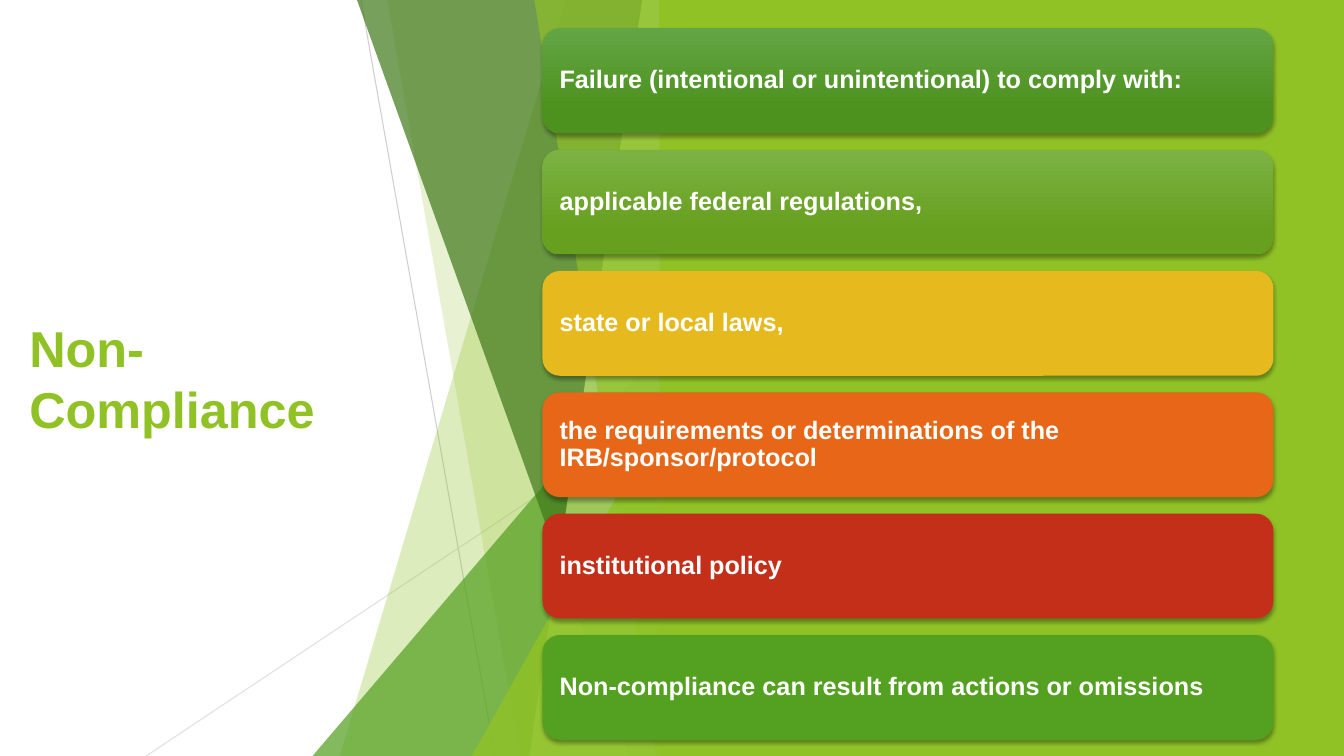
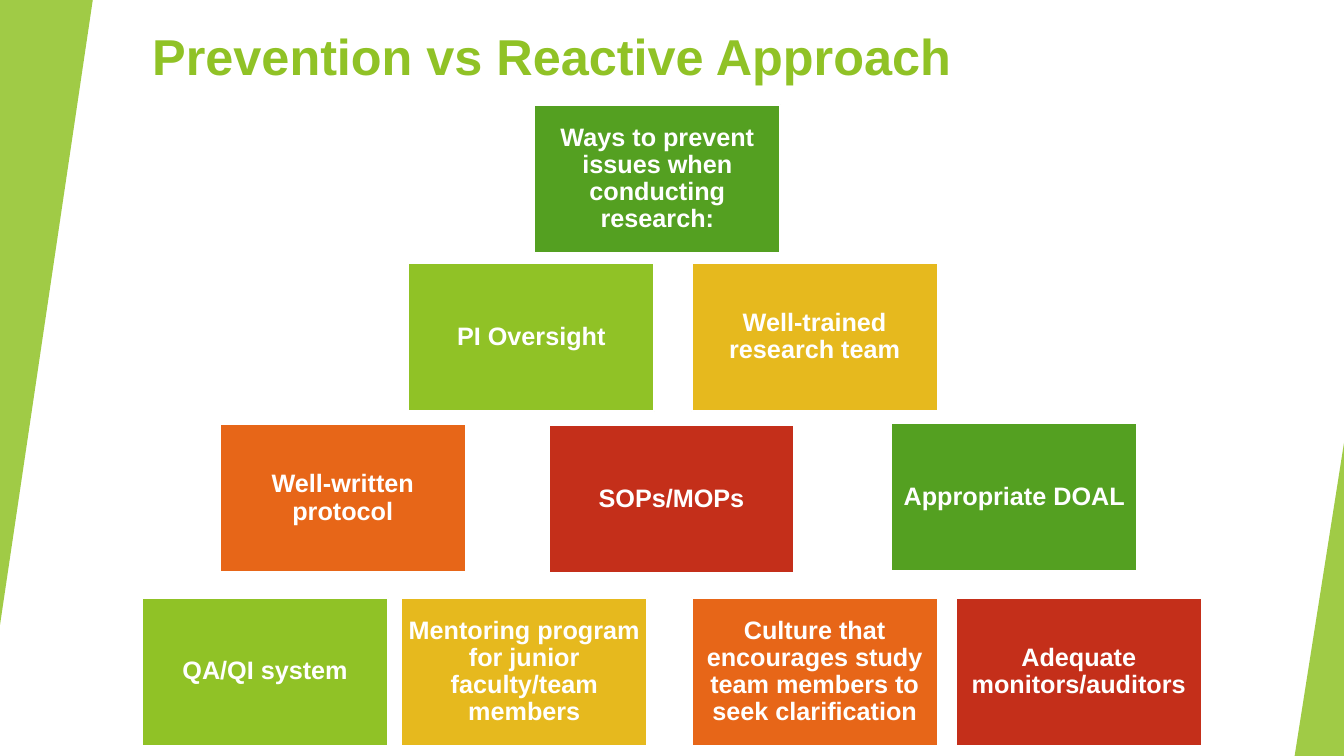
from dataclasses import dataclass
from itertools import cycle

from lxml import etree
from pptx import Presentation
from pptx.dml.color import RGBColor
from pptx.enum.shapes import MSO_CONNECTOR as Conn, MSO_SHAPE as Kind
from pptx.enum.text import MSO_ANCHOR as Anchor, MSO_AUTO_SIZE as Fit, PP_ALIGN as Align
from pptx.oxml.ns import qn
from pptx.util import Inches, Pt


@dataclass(frozen=True)
class Theme:
    font: str = "Arial"
    head: int = 36
    body: int = 18
    white: str = "FFFFFF"
    lime: str = "90C226"
    pale: str = "C0E474"
    green: str = "54A021"
    dark: str = "3F7819"
    gold: str = "E6B91E"
    orange: str = "E76618"
    red: str = "C42F1A"
    gray: str = "BFBFBF"
    light: str = "D9D9D9"
    shade: str = "000000"
    moss: tuple = ("63A545", "4D921E")
    leaf: tuple = ("7BB244", "679F1E")


T = Theme()
WIDE, HIGH = 13.33, 7.5


def add(parent, tag, **attrs):
    node = etree.SubElement(parent, qn(tag))
    for key, value in attrs.items():
        node.set(key, str(value))
    return node


def fade(shape, alpha):
    """Make the shape's one solid colour partly opaque (alpha in percent)."""
    if alpha < 100:
        color = shape._element.spPr.find(".//" + qn("a:srgbClr"))
        add(color, "a:alpha", val=alpha * 1000)


class Deck:
    def __init__(self):
        self.show = Presentation()
        self.show.slide_width = Inches(WIDE)
        self.show.slide_height = Inches(HIGH)

    def start(self, title, x, y, w, h, anchor):
        """Add a slide and place its title."""
        self.slide = self.show.slides.add_slide(self.show.slide_layouts[5])
        self.shapes = self.slide.shapes
        head = self.shapes.title
        head.left, head.top, head.width, head.height = map(Inches, (x, y, w, h))
        self.label(head, title, T.head, T.lime, Align.LEFT, anchor)

    def label(self, shape, text, size, color, align, anchor=Anchor.MIDDLE):
        frame = shape.text_frame
        frame.text = text
        frame.word_wrap = True
        frame.auto_size = Fit.NONE
        frame.vertical_anchor = anchor
        para = frame.paragraphs[0]
        para.alignment = align
        font = para.font
        font.name, font.size, font.bold = T.font, Pt(size), True
        font.color.rgb = RGBColor.from_string(color)
        return frame

    def paint(self, shape, fill, alpha=100):
        """Fill with one colour, or with a pair as a downward gradient."""
        shape.shadow.inherit = False
        shape.line.fill.background()
        if isinstance(fill, tuple):
            shape.fill.gradient()
            shape.fill.gradient_angle = 270
            for stop, spot, color in zip(shape.fill.gradient_stops, (0, 0.78), fill):
                stop.position = spot
                stop.color.rgb = RGBColor.from_string(color)
        else:
            shape.fill.solid()
            shape.fill.fore_color.rgb = RGBColor.from_string(fill)
            fade(shape, alpha)

    def block(self, kind, x, y, w, h, fill, alpha=100):
        shape = self.shapes.add_shape(kind, *map(Inches, (x, y, w, h)))
        self.paint(shape, fill, alpha)
        return shape

    def wedge(self, x, y, w, h, fill, alpha, turn=0):
        """Right triangle with its tip at the top right."""
        shape = self.block(Kind.ISOSCELES_TRIANGLE, x, y, w, h, fill, alpha)
        shape.adjustments[0] = 1
        shape.rotation = turn

    def facet(self, top, base, edge, fill, alpha):
        """Full-height panel from a slanted left side to a straight right edge."""
        points = [(edge, 0), (edge, HIGH), (base, HIGH)]
        form = self.shapes.build_freeform(Inches(top), 0)
        form.add_line_segments([(Inches(x), Inches(y)) for x, y in points])
        self.paint(form.convert_to_shape(), fill, alpha)

    def line(self, x1, y1, x2, y2, color, alpha):
        line = self.shapes.add_connector(
            Conn.STRAIGHT, *map(Inches, (x1, y1, x2, y2)))
        line.line.width = Pt(0.75)
        line.line.color.rgb = RGBColor.from_string(color)
        fade(line, alpha)
        add(line._element.spPr, "a:effectLst")

    def card(self, text, x, y, w, h, fill):
        """Rounded bar with a soft shadow and left-aligned text."""
        shape = self.block(Kind.ROUNDED_RECTANGLE, x, y, w, h, fill)
        glow = add(shape._element.spPr.find(qn("a:effectLst")), "a:outerShdw",
                   blurRad=Pt(3), dist=Pt(2), dir=90 * 60000, rotWithShape=0)
        add(add(glow, "a:srgbClr", val=T.shade), "a:alpha", val=35000)
        frame = self.label(shape, text, T.body, T.white, Align.LEFT)
        frame.margin_left = frame.margin_right = Inches(0.12)
        frame.paragraphs[0].line_spacing = 0.9

    def box(self, text, x, y, w, h, fill):
        """White-edged box with centred text."""
        shape = self.block(Kind.RECTANGLE, x, y, w, h, fill)
        shape.line.color.rgb = RGBColor.from_string(T.white)
        shape.line.width = Pt(1.5)
        frame = self.label(shape, text, T.body, T.white, Align.CENTER)
        frame.margin_left = frame.margin_right = Inches(0.07)
        frame.margin_top = frame.margin_bottom = Inches(0.07)
        frame.paragraphs[0].line_spacing = 0.9


def breach(deck):
    deck.start("Non-Compliance", 0.19, 1.51, 3.39, 4.48, Anchor.MIDDLE)
    deck.line(3.58, 0, 4.91, HIGH, T.gray, 75)
    deck.line(6.66, 4.03, 1.45, HIGH, T.light, 80)
    edge = 6.66
    deck.facet(5.61, 3.37, edge, T.lime, 30)
    deck.facet(3.84, 5.16, edge, T.lime, 20)
    deck.wedge(3.1, 3.33, 3.56, 4.17, T.green, 72)
    deck.facet(3.54, 6.24, edge, T.dark, 70)
    deck.facet(6.37, 5.25, edge, T.pale, 70)
    deck.facet(5.3, 6.51, edge, T.lime, 65)
    deck.wedge(4.68, 3.93, 1.99, 3.57, T.lime, 80)
    deck.block(Kind.RECTANGLE, 6.54, 0, WIDE - 6.54, HIGH, T.lime)
    cards = [
        ("Failure (intentional or unintentional) to comply with:", T.moss),
        ("applicable federal regulations,", T.leaf),
        ("state or local laws,", T.gold),
        ("the requirements or determinations of the IRB/sponsor/protocol", T.orange),
        ("institutional policy", T.red),
        ("Non-compliance can result from actions or omissions", T.green),
    ]
    first, last = 0.28, 6.3
    step = (last - first) / (len(cards) - 1)
    for i, (text, fill) in enumerate(cards):
        deck.card(text, 5.38, first + i * step, 7.25, 1.04, fill)


def prevent(deck):
    deck.start("Prevention vs Reactive Approach", 1.41, 0.2, 11.15, 0.66, Anchor.TOP)
    deck.wedge(0, 0, 0.92, 6.2, T.lime, 85, turn=180)
    deck.wedge(12.84, 4.39, 0.49, 3.11, T.lime, 85)
    boxes = [
        ("Ways to prevent issues when conducting research:", 5.3, 1.04),
        ("PI Oversight", 4.05, 2.61),
        ("Well-trained research team", 6.86, 2.61),
        ("Well-written protocol", 2.18, 4.21),
        ("SOPs/MOPs", 5.44, 4.22),
        ("Appropriate DOAL", 8.84, 4.2),
        ("QA/QI system", 1.41, 5.93),
        ("Mentoring program for junior faculty/team members", 3.98, 5.93),
        ("Culture that encourages study team members to seek clarification", 6.86, 5.93),
        ("Adequate monitors/auditors", 9.48, 5.93),
    ]
    fills = cycle((T.green, T.lime, T.gold, T.orange, T.red))
    for (text, x, y), fill in zip(boxes, fills):
        deck.box(text, x, y, 2.44, 1.47, fill)


def main():
    deck = Deck()
    breach(deck)
    prevent(deck)
    deck.show.save("out.pptx")


if __name__ == "__main__":
    main()
